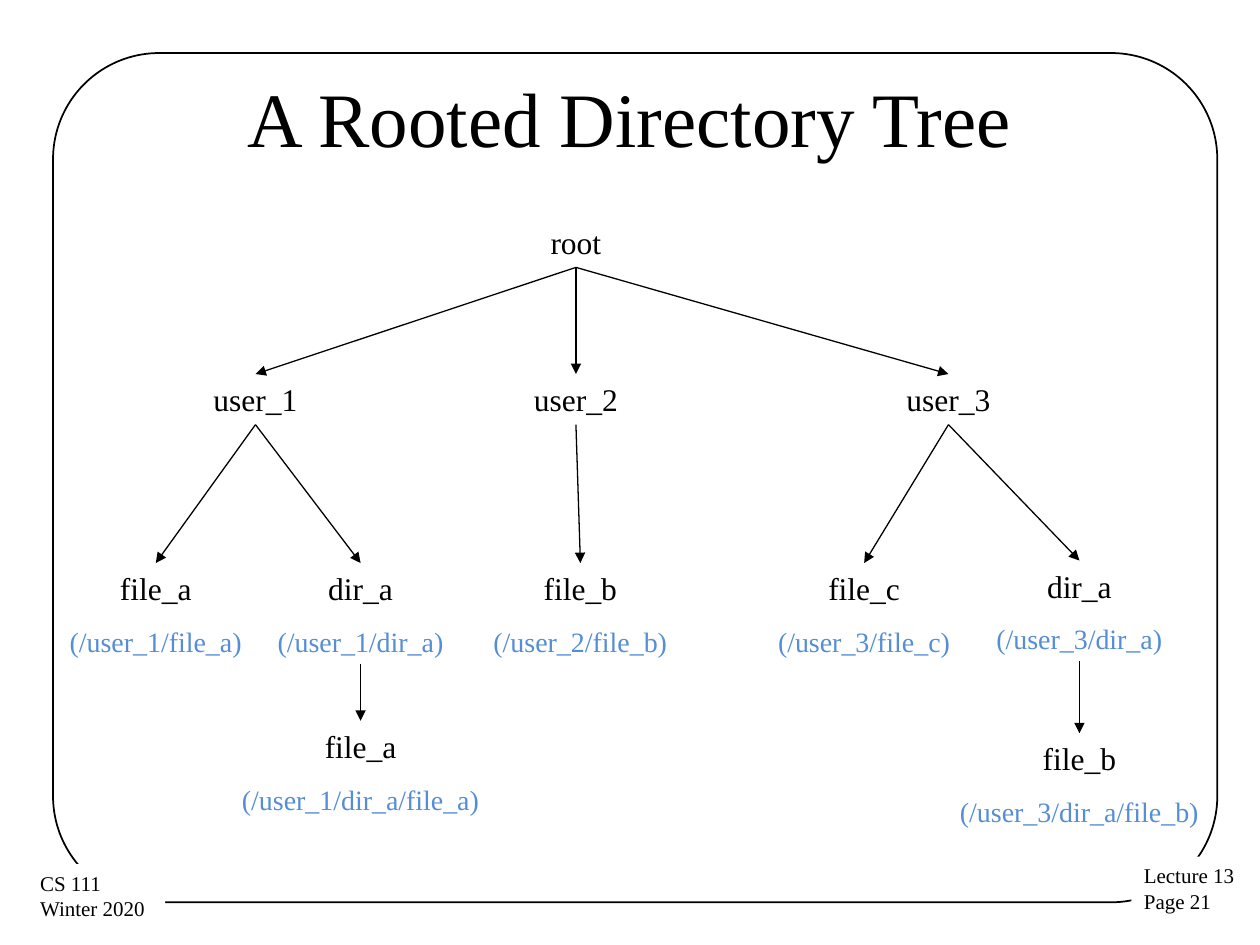
from dataclasses import dataclass
from typing import Optional

from lxml import etree
from pptx import Presentation
from pptx.dml.color import RGBColor
from pptx.enum.shapes import MSO_CONNECTOR, MSO_SHAPE
from pptx.enum.text import MSO_ANCHOR, PP_ALIGN
from pptx.oxml.ns import qn
from pptx.util import Cm, Pt

STRAIGHT = MSO_CONNECTOR.STRAIGHT
RECTANGLE = MSO_SHAPE.RECTANGLE
ROUNDED = MSO_SHAPE.ROUNDED_RECTANGLE
CENTER, LEFT = PP_ALIGN.CENTER, PP_ALIGN.LEFT
TOP, MIDDLE = MSO_ANCHOR.TOP, MSO_ANCHOR.MIDDLE
BOTTOM_SIDE, TOP_SIDE = 2, 0

FONT = "Times New Roman"
COLORS = {"ink": "000000", "path": "558ED5", "paper": "FFFFFF"}
NAME_HEIGHT, NAME_AND_PATH_HEIGHT = 1.02, 2.03


@dataclass(frozen=True)
class Node:
    name: str
    center: float
    top: float
    width: float
    parent: Optional["Node"] = None

    @property
    def full_path(self) -> str:
        return f"{self.parent.full_path}/{self.name}" if self.parent else ""

    @property
    def shows_path(self) -> bool:
        return self.parent is not None and self.parent.parent is not None


@dataclass(frozen=True)
class Corner:
    lines: tuple[str, str]
    left: float
    top: float
    width: float


USER_TOP, ENTRY_TOP = 7.54, 11.35
ROOT = Node("root", 11.61, 4.37, 2.34)
USER_1 = Node("user_1", 5.15, USER_TOP, 2.97, ROOT)
USER_2 = Node("user_2", 11.61, USER_TOP, 2.97, ROOT)
USER_3 = Node("user_3", 19.12, USER_TOP, 2.97, ROOT)
DIR_1 = Node("dir_a", 7.27, ENTRY_TOP, 4.24, USER_1)
DIR_3 = Node("dir_a", 21.76, 11.3, 4.45, USER_3)
TREE = [
    ROOT, USER_1, USER_2, USER_3,
    Node("file_a", 3.14, ENTRY_TOP, 5.28, USER_1),
    DIR_1,
    Node("file_b", 11.7, ENTRY_TOP, 4.65, USER_2),
    Node("file_c", 17.42, ENTRY_TOP, 4.65, USER_3),
    DIR_3,
    Node("file_a", 7.27, 14.53, 7.62, DIR_1),
    Node("file_b", 21.76, 14.78, 6.15, DIR_3),
]
CORNERS = [
    Corner(("Lecture 13", "Page 21"), 22.81, 17.27, 2.36),
    Corner(("CS 111", "Winter 2020"), 0.56, 17.42, 2.77),
]


def color(key: str) -> RGBColor:
    return RGBColor.from_string(COLORS[key])


def format_paragraph(paragraph, size: float, align, color_key: str = "ink") -> None:
    paragraph.alignment = align
    for run in paragraph.runs:
        run.font.name = FONT
        run.font.size = Pt(size)
        run.font.color.rgb = color(color_key)


def draw_frame(slide) -> None:
    frame = slide.shapes.add_shape(ROUNDED, Cm(1.07), Cm(1.07), Cm(23.47), Cm(17.12))
    frame.adjustments[0] = 0.125
    frame.shadow.inherit = False
    frame.fill.background()
    frame.line.color.rgb = color("ink")
    frame.line.width = Pt(1)


def draw_corner(slide, corner: Corner) -> None:
    label = slide.shapes.add_shape(
        RECTANGLE, Cm(corner.left), Cm(corner.top), Cm(corner.width), Cm(1.3))
    label.shadow.inherit = False
    label.fill.solid()
    label.fill.fore_color.rgb = color("paper")
    label.line.fill.background()
    label.text_frame.text = "\n".join(corner.lines)
    label.text_frame.word_wrap = False
    label.text_frame.vertical_anchor = TOP
    for paragraph in label.text_frame.paragraphs:
        format_paragraph(paragraph, 12, LEFT)


def draw_title(slide) -> None:
    title = slide.shapes.title
    title.left, title.top, title.width, title.height = Cm(1.27), Cm(0.76), Cm(22.86), Cm(3.18)
    title.text_frame.text = "A Rooted Directory Tree"
    title.text_frame.vertical_anchor = MIDDLE
    format_paragraph(title.text_frame.paragraphs[0], 44, CENTER)


def draw_node(slide, node: Node):
    height = NAME_AND_PATH_HEIGHT if node.shows_path else NAME_HEIGHT
    label = slide.shapes.add_textbox(
        Cm(node.center - node.width / 2), Cm(node.top), Cm(node.width), Cm(height))
    frame = label.text_frame
    frame.word_wrap = True
    frame.text = node.name
    format_paragraph(frame.paragraphs[0], 18, CENTER)
    if node.shows_path:
        path_line = frame.add_paragraph()
        path_line.text = f"({node.full_path})"
        path_line.space_before = Pt(10)
        format_paragraph(path_line, 16, CENTER, "path")
    return label


def draw_arrow(slide, parent_label, child_label) -> None:
    arrow = slide.shapes.add_connector(STRAIGHT, 0, 0, 0, 0)
    arrow.begin_connect(parent_label, BOTTOM_SIDE)
    arrow.end_connect(child_label, TOP_SIDE)
    arrow.line.color.rgb = color("ink")
    arrow.line.width = Pt(0.75)
    etree.SubElement(arrow.line._get_or_add_ln(), qn("a:tailEnd"), type="triangle")
    etree.SubElement(arrow._element.spPr, qn("a:effectLst"))


def main() -> None:
    presentation = Presentation()
    presentation.slide_width, presentation.slide_height = Cm(25.4), Cm(19.05)
    slide = presentation.slides.add_slide(presentation.slide_layouts[5])
    draw_frame(slide)
    for corner in CORNERS:
        draw_corner(slide, corner)
    draw_title(slide)
    labels = {node: draw_node(slide, node) for node in TREE}
    for node in TREE:
        if node.parent:
            draw_arrow(slide, labels[node.parent], labels[node])
    presentation.save("out.pptx")


if __name__ == "__main__":
    main()
